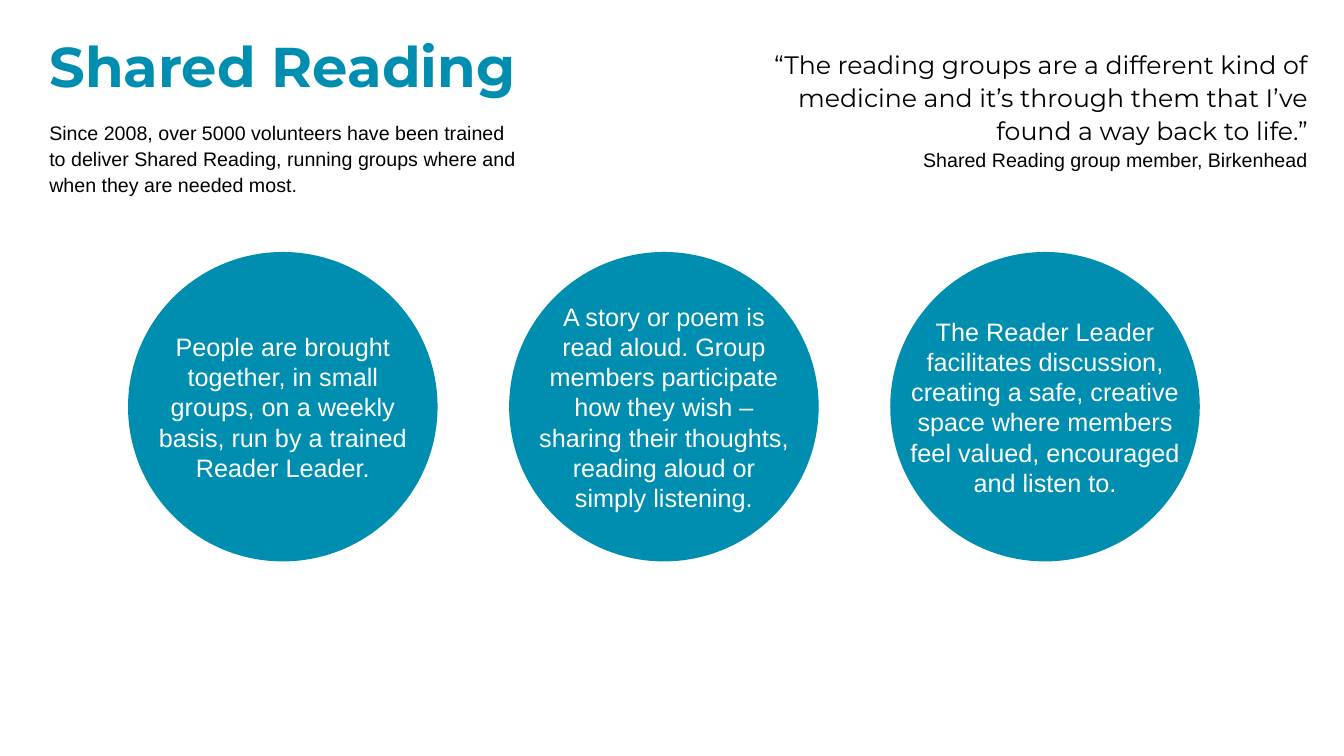
from pptx import Presentation
from pptx.dml.color import RGBColor
from pptx.enum.shapes import MSO_SHAPE as Preset
from pptx.enum.text import MSO_ANCHOR as Anchor, MSO_AUTO_SIZE as AutoSize, PP_ALIGN as Align
from pptx.util import Inches, Pt

COLORS = {"teal": "008EB0", "black": "000000", "white": "FFFFFF"}
HEADING_FONT, BODY_FONT = "Montserrat", "Arial"
TITLE_ONLY = 5

CIRCLE_SIZE, CIRCLE_LEFT, CIRCLE_TOP, CIRCLE_PITCH = 3.07, 1.27, 2.5, 3.78
# Each step has its wording and the width of its text.
STEPS = [
    ("People are brought together, in small groups, on a weekly basis, "
     "run by a trained Reader Leader.", 2.89),
    ("A story or poem is read aloud. Group members participate how they wish – "
     "sharing their thoughts, reading aloud or simply listening.", 2.7),
    ("The Reader Leader facilitates discussion, creating a safe, creative space "
     "where members feel valued, encouraged and listen to.", 2.93),
]


class SlideBuilder:
    def __init__(self, presentation):
        self.slide = presentation.slides.add_slide(presentation.slide_layouts[TITLE_ONLY])

    def color(self, name):
        return RGBColor.from_string(COLORS[name])

    def fill_text(self, shape, lines, color="black", align=Align.LEFT,
                  spacing=1.0, anchor=Anchor.TOP, bold=False):
        """Write lines of (text, font name, point size) into a shape."""
        frame = shape.text_frame
        frame.word_wrap = True
        frame.auto_size = AutoSize.NONE
        frame.vertical_anchor = anchor
        for index, (text, font_name, size) in enumerate(lines):
            paragraph = frame.add_paragraph() if index else frame.paragraphs[0]
            paragraph.text = text
            paragraph.alignment = align
            paragraph.line_spacing = spacing
            font = paragraph.runs[0].font
            font.name, font.size, font.bold = font_name, Pt(size), bold
            font.color.rgb = self.color(color)

    def title(self, text, left, top, width, height):
        title = self.slide.shapes.title
        title.left, title.top = Inches(left), Inches(top)
        title.width, title.height = Inches(width), Inches(height)
        self.fill_text(title, [(text, HEADING_FONT, 40)], "teal", bold=True)

    def text(self, lines, left, top, width, height, shapes=None, **style):
        shapes = shapes or self.slide.shapes
        box = shapes.add_textbox(Inches(left), Inches(top), Inches(width), Inches(height))
        self.fill_text(box, lines, **style)

    def step_circle(self, text, left, text_width):
        """Group a circle with centred text, which may run wider than its inner box."""
        shapes = self.slide.shapes.add_group_shape().shapes
        size = Inches(CIRCLE_SIZE)
        circle = shapes.add_shape(Preset.OVAL, Inches(left), Inches(CIRCLE_TOP), size, size)
        circle.shadow.inherit = False
        circle.fill.solid()
        circle.fill.fore_color.rgb = self.color("teal")
        circle.line.fill.background()
        self.text([(text, BODY_FONT, 18)], left + (CIRCLE_SIZE - text_width) / 2, CIRCLE_TOP,
                  text_width, CIRCLE_SIZE, shapes, color="white", align=Align.CENTER,
                  anchor=Anchor.MIDDLE)


def main():
    presentation = Presentation()
    presentation.slide_width, presentation.slide_height = Inches(13.33), Inches(7.5)
    builder = SlideBuilder(presentation)

    builder.title("Shared Reading", 0.39, 0.26, 5.01, 0.77)
    builder.text([("Since 2008, over 5000 volunteers have been trained to deliver Shared Reading, "
                   "running groups where and when they are needed most.", BODY_FONT, 14)],
                 0.39, 1.13, 4.92, 0.88, spacing=1.1)
    for index, (text, text_width) in enumerate(STEPS):
        builder.step_circle(text, CIRCLE_LEFT + index * CIRCLE_PITCH, text_width)
    builder.text([("“The reading groups are a different kind of medicine and it’s through them "
                   "that I’ve found a way back to life.”", HEADING_FONT, 18),
                  ("Shared Reading group member, Birkenhead", BODY_FONT, 14)],
                 7.43, 0.41, 5.64, 1.6, align=Align.RIGHT, spacing=1.1)

    presentation.save("out.pptx")


if __name__ == "__main__":
    main()
